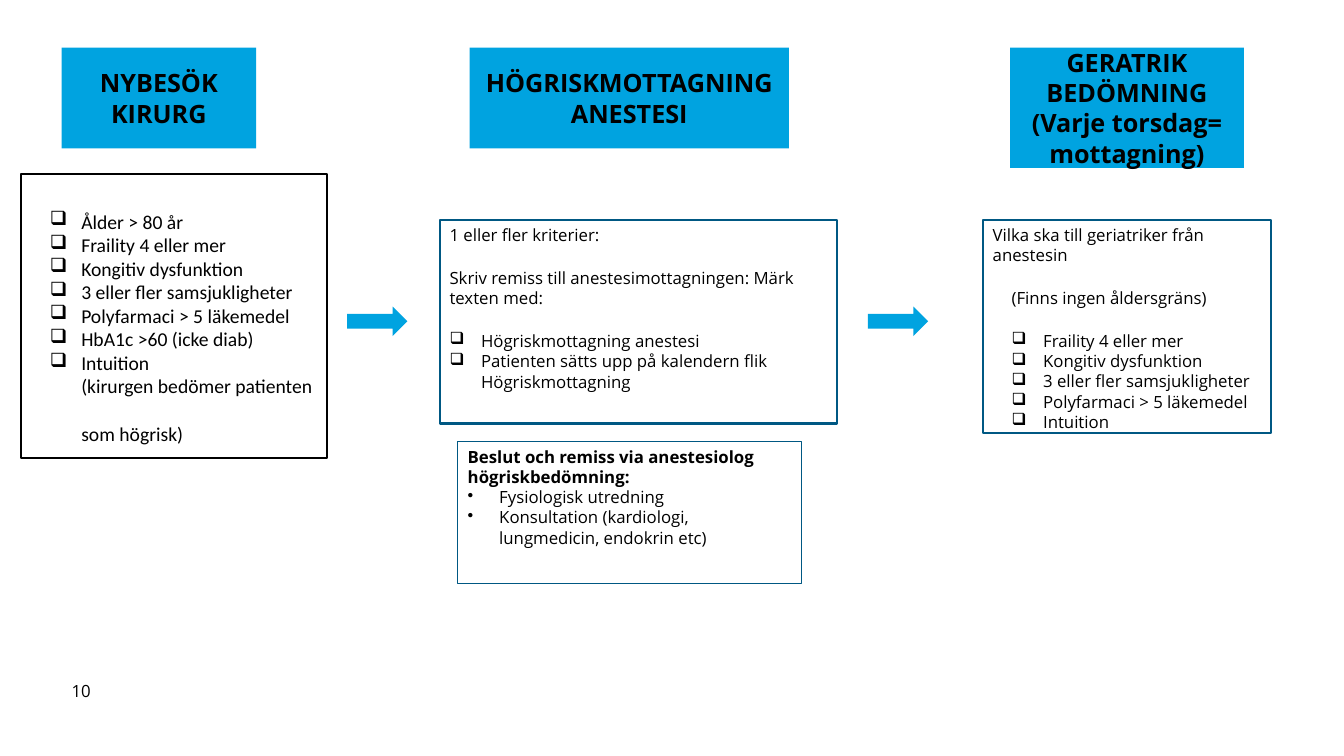
from dataclasses import dataclass

from lxml import etree
from pptx import Presentation
from pptx.dml.color import RGBColor
from pptx.enum.shapes import MSO_SHAPE
from pptx.enum.text import MSO_ANCHOR, PP_ALIGN
from pptx.oxml.ns import qn
from pptx.util import Pt

RECTANGLE = MSO_SHAPE.RECTANGLE
RIGHT_ARROW = MSO_SHAPE.RIGHT_ARROW
TOP = MSO_ANCHOR.TOP
MIDDLE = MSO_ANCHOR.MIDDLE
LEFT = PP_ALIGN.LEFT
CENTER = PP_ALIGN.CENTER

BLUE = RGBColor(0x00, 0xA3, 0xE0)
DARK_BLUE = RGBColor(0x00, 0x58, 0x83)
BLACK = RGBColor(0, 0, 0)

CHECKBOX = "❑"
DOT = "•"
HANGING = 22.5
INDENT = 13.5
BLANK_LINE = 16.3


@dataclass
class Line:
    text: str
    bullet: str = ""
    margin: float = 0
    before: float = 0
    bold: bool = False


def checklist(items, margin=0, before=0):
    """Checkbox lines, with the gap above the first one only."""
    return [Line(item, CHECKBOX, margin + HANGING, 0 if number else before)
            for number, item in enumerate(items)]


def write_line(paragraph, line, size, font_name, align):
    paragraph.text = line.text
    paragraph.alignment = align
    properties = paragraph._p.get_or_add_pPr()
    properties.set("marL", str(Pt(line.margin)))
    properties.set("indent", str(Pt(-HANGING if line.bullet else 0)))
    if line.before:
        paragraph.space_before = Pt(line.before)
    if line.bullet:
        etree.SubElement(properties, qn("a:buChar"), char=line.bullet)
    font = paragraph.font
    font.size = Pt(size)
    font.name = font_name
    font.bold = line.bold
    font.color.rgb = BLACK


def write_lines(frame, lines, size, font_name="Open Sans", align=LEFT, anchor=TOP):
    frame.word_wrap = True
    frame.vertical_anchor = anchor
    for number, line in enumerate(lines):
        paragraph = frame.add_paragraph() if number else frame.paragraphs[0]
        write_line(paragraph, line, size, font_name, align)


def add_filled(slide, kind, bounds):
    shape = slide.shapes.add_shape(kind, *map(Pt, bounds))
    shape.shadow.inherit = False
    shape.fill.solid()
    shape.fill.fore_color.rgb = BLUE
    shape.line.fill.background()
    return shape


def add_header(slide, bounds, *texts):
    header = add_filled(slide, RECTANGLE, bounds)
    write_lines(header.text_frame, [Line(text, bold=True) for text in texts],
                18, align=CENTER, anchor=MIDDLE)


def add_criteria(slide, bounds, lines, color=DARK_BLUE, weight=1.5,
                 size=12, font_name="Open Sans"):
    box = slide.shapes.add_shape(RECTANGLE, *map(Pt, bounds))
    box.shadow.inherit = False
    box.fill.background()
    box.line.color.rgb = color
    box.line.width = Pt(weight)
    write_lines(box.text_frame, lines, size, font_name)
    return box.text_frame


def main():
    prs = Presentation()
    prs.slide_width, prs.slide_height = Pt(960), Pt(540)
    slide = prs.slides.add_slide(prs.slide_layouts[6])

    # Column headers
    add_header(slide, (44, 34, 139, 72), "NYBESÖK KIRURG")
    add_header(slide, (335.5, 34, 228, 72), "HÖGRISKMOTTAGNING ANESTESI")
    add_header(slide, (721.5, 34, 167, 86),
               "GERATRIK BEDÖMNING", "(Varje torsdag= mottagning)")

    # Surgeon's criteria
    surgeon = checklist([
        "Ålder > 80 år", "Fraility 4 eller mer", "Kongitiv dysfunktion",
        "3 eller fler samsjukligheter", "Polyfarmaci > 5 läkemedel",
        "HbA1c >60 (icke diab)", "Intuition\v(kirurgen bedömer patienten",
    ], INDENT)
    surgeon.append(Line("som högrisk)", margin=INDENT + HANGING, before=17))
    surgeon_frame = add_criteria(slide, (15, 124, 218.5, 203.5), surgeon,
                                 BLACK, size=14, font_name="Calibri")
    surgeon_frame.margin_top = Pt(25.6)
    surgeon_frame.margin_right = Pt(0)

    # Referral to the anaesthesia clinic
    add_criteria(slide, (314, 157, 284, 145.5), [
        Line("1 eller fler kriterier:"),
        Line("Skriv remiss till anestesimottagningen: Märk texten med:",
             before=BLANK_LINE),
        *checklist(["Högriskmottagning anestesi",
                    "Patienten sätts upp på kalendern flik Högriskmottagning"],
                   before=BLANK_LINE),
    ])

    # Decision after the risk assessment
    add_criteria(slide, (327, 315.5, 245.5, 101.5), [
        Line("Beslut och remiss via anestesiolog högriskbedömning:", bold=True),
        Line("Fysiologisk utredning", DOT, HANGING),
        Line("Konsultation (kardiologi, lungmedicin, endokrin etc)", DOT, HANGING),
    ], weight=0.75)

    # Geriatric criteria
    add_criteria(slide, (702, 157, 206, 152.5), [
        Line("Vilka ska till geriatriker från anestesin"),
        Line("(Finns ingen åldersgräns)", margin=INDENT, before=BLANK_LINE),
        *checklist(["Fraility 4 eller mer", "Kongitiv dysfunktion",
                    "3 eller fler samsjukligheter",
                    "Polyfarmaci > 5 läkemedel", "Intuition"],
                   INDENT, BLANK_LINE),
    ])

    # Arrows between the columns
    for left in (248, 620):
        add_filled(slide, RIGHT_ARROW, (left, 219, 43, 21))

    # Page number
    page_number = slide.shapes.add_textbox(Pt(44), Pt(479.5), Pt(40), Pt(28))
    write_lines(page_number.text_frame, [Line("10")], 12, anchor=MIDDLE)

    prs.save("out.pptx")


if __name__ == "__main__":
    main()
